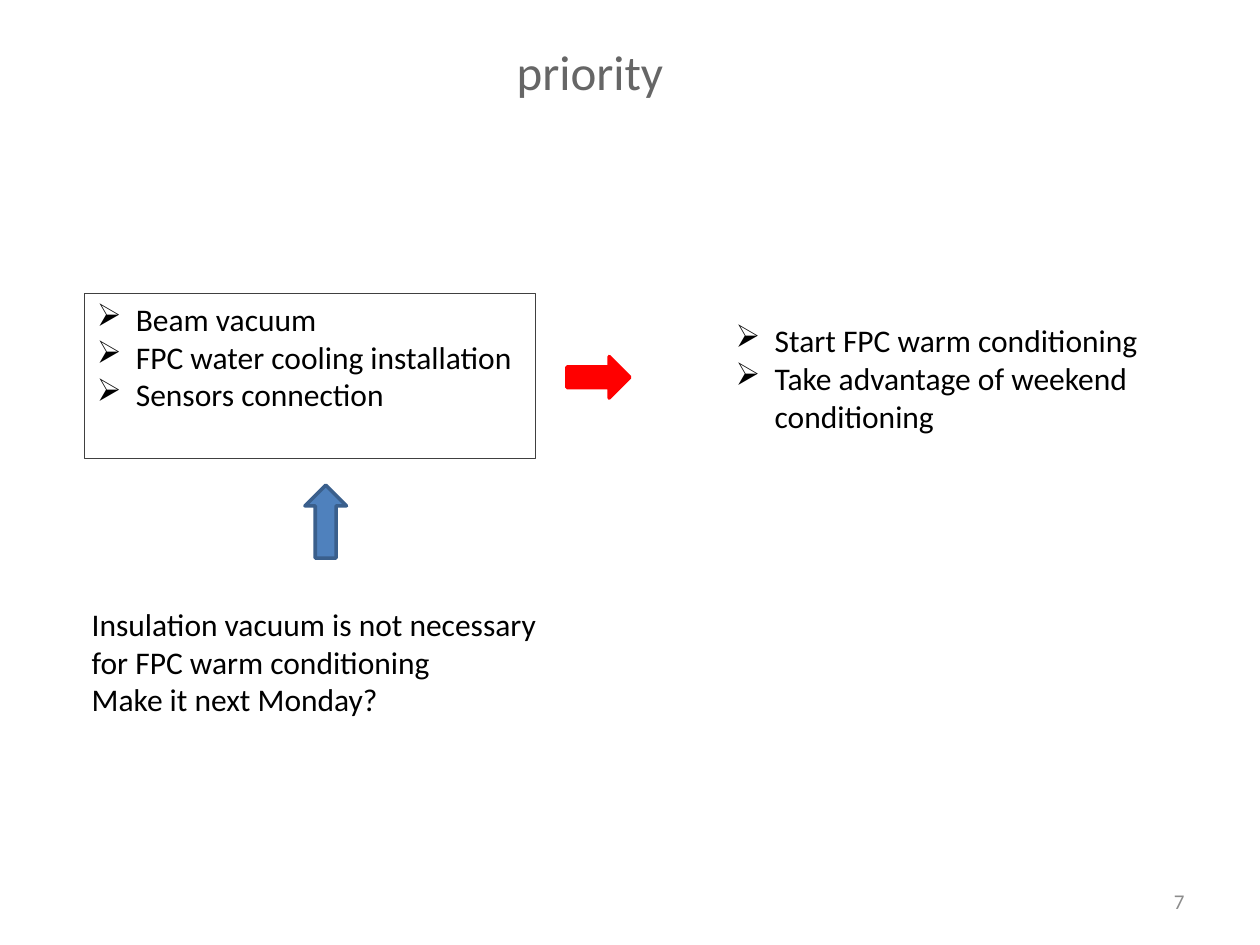
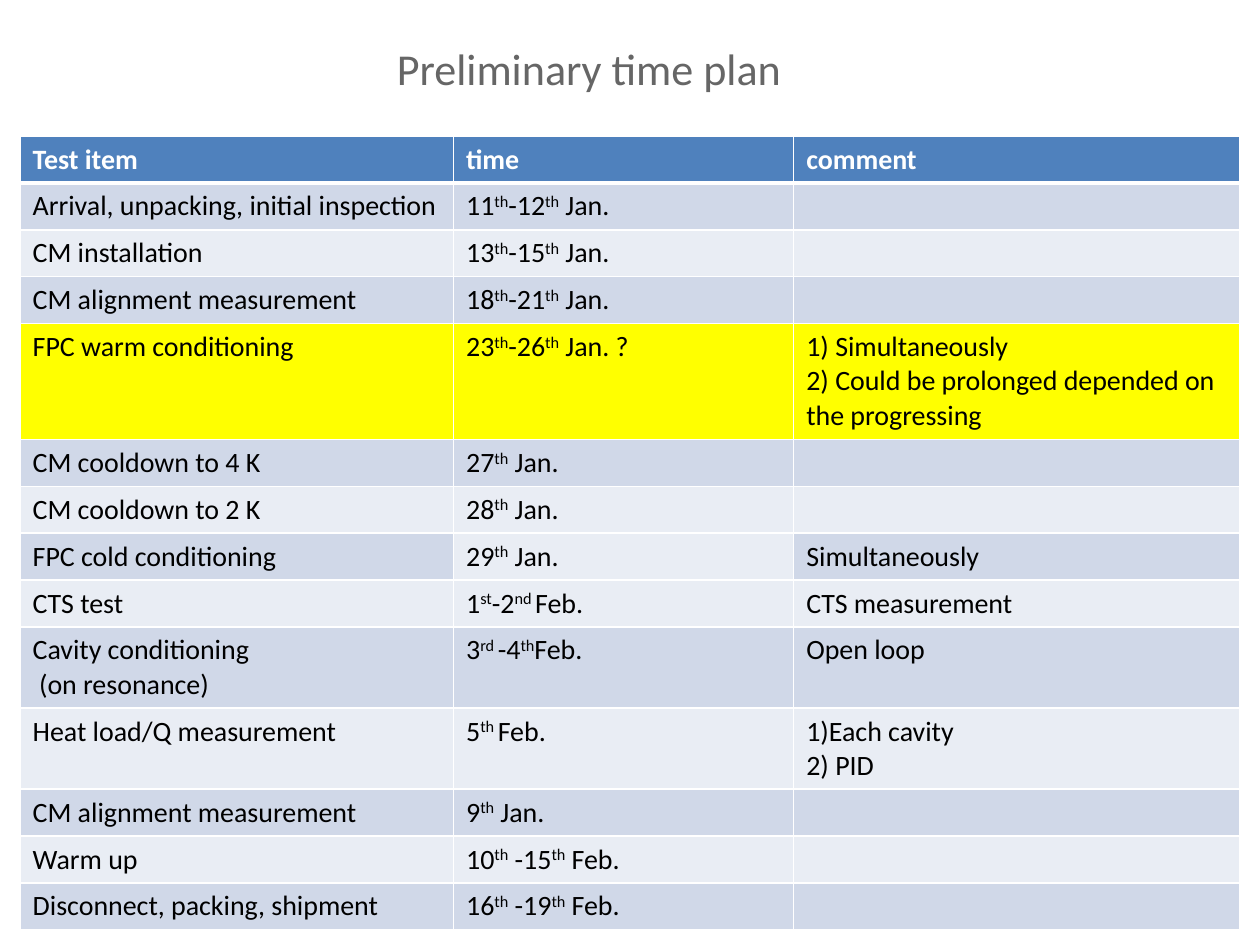
from lxml.etree import SubElement
from pptx import Presentation
from pptx.dml.color import RGBColor
from pptx.enum.shapes import MSO_SHAPE
from pptx.enum.text import MSO_ANCHOR, PP_ALIGN
from pptx.oxml import parse_xml
from pptx.oxml.ns import nsdecls, qn
from pptx.util import Inches, Pt

# Shared look
FONT = "Calibri"
BLACK, WHITE, RED, BLUE, YELLOW = "000000", "FFFFFF", "FF0000", "4F81BD", "FFFF00"
TITLE_GREY, NUMBER_GREY, FRAME_GREY = "666666", "8C8C8C", "404040"
ARROW_EDGE = "3A5F8C"
BANDS = ("D0D8E8", "E9EDF4")
BULLET_INDENT = Inches(0.31)

# Time plan: ^ opens and closes a raised ordinal ending
HEADINGS = ("Test item", "time", "comment")
COLUMN_WIDTHS = (3.44, 2.7, 3.54)
PLAN = (
    ("Arrival, unpacking, initial inspection", "11^th^-12^th^ Jan.", ""),
    ("CM installation", "13^th^-15^th^ Jan.", ""),
    ("CM alignment measurement", "18^th^-21^th^ Jan.", ""),
    ("FPC warm conditioning", "23^th^-26^th^ Jan. ?",
     "1) Simultaneously\n2) Could be prolonged depended on the progressing"),
    ("CM cooldown to 4 K", "27^th^ Jan.", ""),
    ("CM cooldown to 2 K", "28^th^ Jan.", ""),
    ("FPC cold conditioning", "29^th^ Jan.", "Simultaneously"),
    ("CTS test", "1^st^-2^nd ^Feb.", "CTS measurement"),
    ("Cavity conditioning\n (on resonance)", "3^rd ^-4^th^Feb.", "Open loop"),
    ("Heat load/Q measurement", "5^th ^Feb.", "1)Each cavity\n2) PID"),
    ("CM alignment measurement", "9^th^ Jan.", ""),
    ("Warm up", "10^th^ -15^th^ Feb.", ""),
    ("Disconnect, packing, shipment", "16^th^ -19^th^ Feb.", ""),
)
HIGHLIGHTED_ROW = 4
ROW_HEIGHTS = {4: 0.92, 9: 0.64, 10: 0.64}  # rows with several lines
ROW_HEIGHT = 0.37
# The date of the cold conditioning stands on the lighter band
FILL_EXCEPTIONS = {(7, 1): BANDS[1]}


def color(hex_code):
    return RGBColor.from_string(hex_code)


def inches(box):
    return [Inches(length) for length in box]


def style_font(font, size, hex_code, bold=False):
    font.name = FONT
    font.size = Pt(size)
    font.bold = bold
    font.color.rgb = color(hex_code)


def add_page(deck, title, box, size):
    """Title-only page with its title at the given box."""
    page = deck.slides.add_slide(deck.slide_layouts[5])
    holder = page.shapes.title
    holder.left, holder.top, holder.width, holder.height = inches(box)
    frame = holder.text_frame
    frame.text = title
    frame.vertical_anchor = MSO_ANCHOR.MIDDLE
    para = frame.paragraphs[0]
    para.alignment = PP_ALIGN.LEFT
    style_font(para.runs[0].font, size, TITLE_GREY)
    return page


def add_bullet(para):
    properties = para._p.get_or_add_pPr()
    properties.set("marL", str(BULLET_INDENT))
    properties.set("indent", str(-BULLET_INDENT))
    SubElement(properties, qn("a:buChar")).set("char", "➢")


def add_text(page, box, lines, size=18, hex_code=BLACK, bulleted=False):
    """Text box with one paragraph for each line."""
    shape = page.shapes.add_textbox(*inches(box))
    frame = shape.text_frame
    frame.word_wrap = True
    frame.text = "\n".join(lines)
    for para in frame.paragraphs:
        if bulleted:
            add_bullet(para)
        style_font(para.runs[0].font, size, hex_code)
    return shape


def add_block_arrow(page, kind, box, fill, edge):
    arrow = page.shapes.add_shape(kind, *inches(box))
    arrow.shadow.inherit = False
    arrow.fill.solid()
    arrow.fill.fore_color.rgb = color(fill)
    arrow.line.color.rgb = color(edge)
    arrow.line.width = Pt(2)


def add_page_number(page, number):
    box = add_text(page, (8.92, 6.95, 0.58, 0.4), [number], 12, NUMBER_GREY)
    box.text_frame.vertical_anchor = MSO_ANCHOR.MIDDLE
    box.text_frame.paragraphs[0].alignment = PP_ALIGN.RIGHT


def build_priority(deck):
    page = add_page(deck, "priority", (4, 0.17, 2.25, 0.78), 28)
    add_page_number(page, "7")

    # Framed conditions leading to the start of conditioning
    conditions = add_text(
        page, (0.67, 2.33, 3.58, 1.31),
        ["Beam vacuum", "FPC water cooling installation", "Sensors connection"],
        bulleted=True)
    conditions.line.color.rgb = color(FRAME_GREY)
    conditions.line.width = Pt(0.75)
    add_block_arrow(page, MSO_SHAPE.RIGHT_ARROW, (4.5, 2.83, 0.5, 0.33), RED, RED)
    add_text(page, (5.74, 2.5, 3.58, 1.01),
             ["Start FPC warm conditioning",
              "Take advantage of weekend conditioning"], bulleted=True)

    # Remark below the conditions
    add_block_arrow(page, MSO_SHAPE.UP_ARROW, (2.42, 3.85, 0.33, 0.58),
                    BLUE, ARROW_EDGE)
    add_text(page, (0.63, 4.75, 3.83, 1.01),
             ["Insulation vacuum is not necessary for FPC warm conditioning",
              "Make it next Monday?"])


def set_borders(cell, top, bottom):
    """White cell edges, ahead of the fill as the format requires."""
    properties = cell._tc.get_or_add_tcPr()
    widths = (("L", 1), ("R", 1), ("T", top), ("B", bottom))
    for position, (side, width) in enumerate(widths):
        properties.insert(position, parse_xml(
            f'<a:ln{side} {nsdecls("a")} w="{Pt(width)}"><a:solidFill>'
            f'<a:srgbClr val="{WHITE}"/></a:solidFill></a:ln{side}>'))


def write_cell(cell, text, hex_code, bold):
    frame = cell.text_frame
    for number, line in enumerate(text.split("\n")):
        para = frame.add_paragraph() if number else frame.paragraphs[0]
        if not line:
            SubElement(para._p, qn("a:endParaRPr")).set("sz", "1600")
            continue
        for part, words in enumerate(line.split("^")):
            if words:
                span = para.add_run()
                span.text = words
                style_font(span.font, 16, hex_code, bold)
                if part % 2:
                    span._r.get_or_add_rPr().set("baseline", "30000")


def row_fill(row):
    if row == 0:
        return BLUE
    return YELLOW if row == HIGHLIGHTED_ROW else BANDS[(row - 1) % 2]


def add_plan_table(page, left, top):
    rows = (HEADINGS,) + PLAN
    heights = [ROW_HEIGHTS.get(row, ROW_HEIGHT) for row in range(len(rows))]
    table = page.shapes.add_table(
        len(rows), len(HEADINGS),
        *inches((left, top, sum(COLUMN_WIDTHS), sum(heights)))).table
    for column, width in zip(table.columns, COLUMN_WIDTHS):
        column.width = Inches(width)
    for row, texts in enumerate(rows):
        table.rows[row].height = Inches(heights[row])
        is_header = row == 0
        for column, text in enumerate(texts):
            cell = table.cell(row, column)
            cell.fill.solid()
            cell.fill.fore_color.rgb = color(
                FILL_EXCEPTIONS.get((row, column), row_fill(row)))
            set_borders(cell, 3 if row == 1 else 1, 3 if is_header else 1)
            write_cell(cell, text, WHITE if is_header else BLACK, is_header)


def build_time_plan(deck):
    page = add_page(deck, "Preliminary time plan", (3.05, 0.33, 3.91, 0.42), 25.2)
    add_plan_table(page, 0.16, 1.08)


def main():
    deck = Presentation()
    deck.slide_width, deck.slide_height = Inches(10), Inches(7.5)
    build_priority(deck)
    build_time_plan(deck)
    deck.save("out.pptx")


if __name__ == "__main__":
    main()
